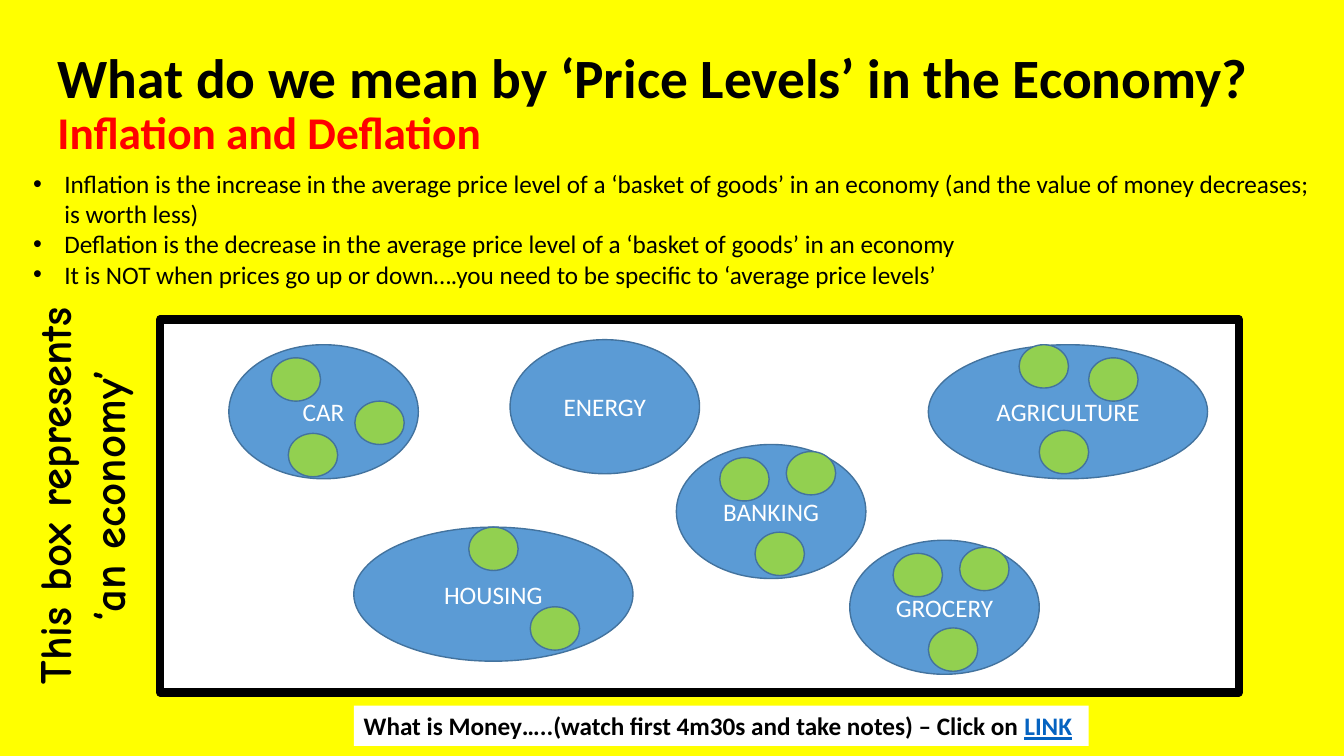
from lxml import etree
from pptx import Presentation
from pptx import util as u
from pptx.dml.color import RGBColor
from pptx.enum import shapes, text
from pptx.oxml import ns

YELLOW = RGBColor(0xFF, 0xFF, 0x00)
WHITE = RGBColor(0xFF, 0xFF, 0xFF)
BLACK = RGBColor(0x00, 0x00, 0x00)
RED = RGBColor(0xFF, 0x00, 0x00)
BLUE = RGBColor(0x5B, 0x9B, 0xD5)
EDGE = RGBColor(0x43, 0x73, 0x9E)
GREEN = RGBColor(0x92, 0xD0, 0x50)
LINK = RGBColor(0x05, 0x63, 0xC1)

show = Presentation()
show.slide_width, show.slide_height = u.Inches(13.333), u.Inches(7.5)
slide = show.slides.add_slide(show.slide_layouts[5])
slide.background.fill.solid()
slide.background.fill.fore_color.rgb = YELLOW


def draw(kind, box, fill, edge=None, width=1):
    shape = slide.shapes.add_shape(kind, *map(u.Inches, box))
    shape.shadow.inherit = False
    shape.fill.solid()
    shape.fill.fore_color.rgb = fill
    if edge is None:
        shape.line.fill.background()
    else:
        shape.line.color.rgb = edge
        shape.line.width = u.Pt(width)
    return shape


def style(font, size, color=BLACK, bold=False, name="Calibri"):
    font.name, font.size, font.bold = name, u.Pt(size), bold
    font.color.rgb = color


# Title in two lines
title = slide.shapes.title
title.left, title.top, title.width, title.height = map(u.Inches, (0.47, 0.24, 12.73, 1.6))
frame = title.text_frame
frame.auto_size = text.MSO_AUTO_SIZE.NONE
frame.vertical_anchor = text.MSO_ANCHOR.MIDDLE
para = frame.paragraphs[0]
para.alignment = text.PP_ALIGN.LEFT
para.line_spacing = 0.9
run = para.add_run()
run.text = "What do we mean by ‘Price Levels’ in the Economy?"
style(run.font, 39.6, bold=True)
para.add_line_break()
run = para.add_run()
run.text = "Inflation and Deflation"
style(run.font, 32.4, RED, True)

# The economy: a framed box
draw(shapes.MSO_SHAPE.RECTANGLE, (1.59, 3.17, 10.7, 3.7), WHITE, BLACK, 6)

# Sectors: name, left, top, width, and offsets of the dots inside
OVAL = shapes.MSO_SHAPE.OVAL
SMALL, LARGE, HIGH = 1.88, 2.77, 1.33
TRIO = [(0.43, 0.13), (1.09, 0.07), (0.78, 0.87)]
sectors = [
    ("CAR", 2.27, 3.42, SMALL, [(0.42, 0.13), (1.25, 0.56), (0.59, 0.88)]),
    ("AGRICULTURE", 9.21, 3.42, LARGE, [(0.9, 0), (1.59, 0.13), (1.1, 0.85)]),
    ("HOUSING", 3.51, 5.23, LARGE, [(1.14, 0), (1.75, 0.79)]),
    ("GROCERY", 8.43, 5.36, SMALL, TRIO),
    ("ENERGY", 5.06, 3.37, SMALL, []),
    ("BANKING", 6.71, 4.41, SMALL, TRIO),
]
for name, left, top, wide, dots in sectors:
    frame = draw(OVAL, (left, top, wide, HIGH), BLUE, EDGE).text_frame
    frame.vertical_anchor = text.MSO_ANCHOR.MIDDLE
    para = frame.paragraphs[0]
    para.text = name
    para.alignment = text.PP_ALIGN.CENTER
    style(para.font, 18, WHITE)
    for right, down in dots:
        draw(OVAL, (left + right, top + down, 0.49, 0.43), GREEN, EDGE)

# Definitions as bullets
notes = [
    "Inflation is the increase in the average price level of a ‘basket of goods’ in an economy "
    "(and the value of money decreases; is worth less)",
    "Deflation is the decrease in the average price level of a ‘basket of goods’ in an economy",
    "It is NOT when prices go up or down….you need to be specific to ‘average price levels’",
]
frame = slide.shapes.add_textbox(*map(u.Inches, (0.23, 1.62, 12.97, 1.31))).text_frame
frame.word_wrap = True
for i, note in enumerate(notes):
    para = frame.add_paragraph() if i else frame.paragraphs[0]
    para.text = note
    style(para.font, 18)
    props = para._p.get_or_add_pPr()
    props.set("marL", str(u.Inches(0.31)))
    props.set("indent", str(-u.Inches(0.31)))
    mark = etree.Element(ns.qn("a:buFont"), typeface="Arial")
    props.insert(0, mark)
    mark.addnext(etree.Element(ns.qn("a:buChar"), char="•"))

# Label turned upright beside the box
label = slide.shapes.add_textbox(*map(u.Inches, (-1.18, 4.33, 3.98, 1.18)))
label.rotation = 270
label.text_frame.word_wrap = True
para = label.text_frame.paragraphs[0]
para.text = "This box represents ‘an economy’"
para.alignment = text.PP_ALIGN.CENTER
style(para.font, 32, bold=True, name="Comic Neue")

# Video prompt
frame = draw(shapes.MSO_SHAPE.RECTANGLE, (3.51, 7, 7.29, 0.4), WHITE).text_frame
frame.word_wrap = False
frame.vertical_anchor = text.MSO_ANCHOR.TOP
para = frame.paragraphs[0]
para.alignment = text.PP_ALIGN.LEFT
for words, color in [
    ("What is Money…..(watch first 4m30s and take notes) – Click on ", BLACK),
    ("LINK", LINK),
]:
    run = para.add_run()
    run.text = words
    style(run.font, 18, color, True)
run.font.underline = True

show.save("out.pptx")
